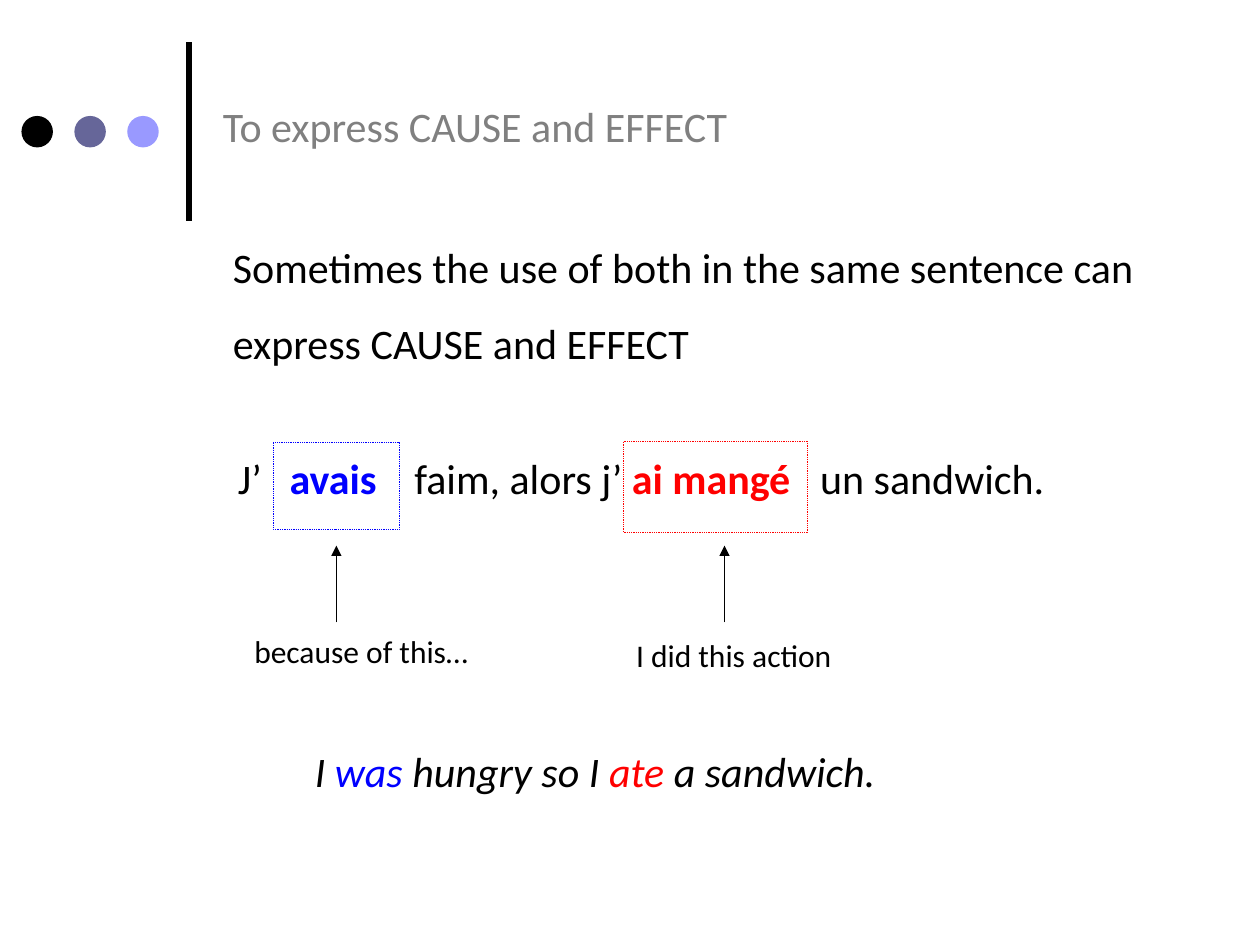
from dataclasses import dataclass

from lxml import etree
from pptx import Presentation
from pptx.dml.color import RGBColor
from pptx.enum.dml import MSO_LINE
from pptx.enum.shapes import MSO_CONNECTOR, MSO_SHAPE
from pptx.oxml.ns import qn
from pptx.util import Inches, Pt

STRAIGHT = MSO_CONNECTOR.STRAIGHT
OVAL = MSO_SHAPE.OVAL
RECTANGLE = MSO_SHAPE.RECTANGLE
DOTTED = MSO_LINE.ROUND_DOT


@dataclass(frozen=True)
class Theme:
    font: str = "Calibri"
    text: RGBColor = RGBColor(0, 0, 0)
    title: RGBColor = RGBColor(0x80, 0x80, 0x80)
    cause: RGBColor = RGBColor(0, 0, 0xFF)
    effect: RGBColor = RGBColor(0xFF, 0, 0)
    dots: tuple = (RGBColor(0, 0, 0), RGBColor(0x66, 0x66, 0x99), RGBColor(0x99, 0x99, 0xFF))
    body_size: int = 24
    caption_size: int = 18


THEME = Theme()


def add_text(slide, box, runs, size=THEME.body_size, italic=False):
    """Place one paragraph of (text, colour, bold) runs and return it."""
    text_box = slide.shapes.add_textbox(*map(Inches, box))
    text_box.text_frame.word_wrap = True
    paragraph = text_box.text_frame.paragraphs[0]
    for text, color, bold in runs:
        run = paragraph.add_run()
        run.text = text
        run.font.name = THEME.font
        run.font.size = Pt(size)
        run.font.bold = bold
        run.font.italic = italic
        run.font.color.rgb = color
    return paragraph


def add_tab_stops(paragraph, positions):
    properties = paragraph._p.get_or_add_pPr()
    tab_list = etree.SubElement(properties, qn("a:tabLst"))
    for position in positions:
        etree.SubElement(tab_list, qn("a:tab"), pos=str(Inches(position)), algn="l")


def add_line(slide, x, bottom, top, width, arrow=False):
    """Draw a vertical line upwards, with an arrowhead at the top if asked."""
    line = slide.shapes.add_connector(
        STRAIGHT, Inches(x), Inches(bottom), Inches(x), Inches(top))
    line.line.color.rgb = THEME.text
    line.line.width = Pt(width)
    if arrow:
        etree.SubElement(line.line._get_or_add_ln(), qn("a:tailEnd"), type="triangle")
    etree.SubElement(line._element.spPr, qn("a:effectLst"))


def add_header(slide, left, top, width, height):
    # Vertical rule
    add_line(slide, left + 1.33, top + height, top, 3)

    # Row of dots
    diameter, pitch = 0.25, 0.42
    for index, color in enumerate(THEME.dots):
        dot = slide.shapes.add_shape(
            OVAL, Inches(left + index * pitch), Inches(top + 0.59),
            Inches(diameter), Inches(diameter))
        dot.shadow.inherit = False
        dot.fill.solid()
        dot.fill.fore_color.rgb = color
        dot.line.fill.background()

    # Title
    add_text(slide, (left + 1.5, top + 0.42, width - 1.5, 0.5),
             [("To express CAUSE and EFFECT", THEME.title, False)])


def add_introduction(slide, box):
    paragraph = add_text(slide, box, [
        ("Sometimes the use of both in the same sentence can express CAUSE and EFFECT",
         THEME.text, False)])
    paragraph.line_spacing = 1.5
    paragraph.space_before = Pt(6)


def add_sentence(slide, box):
    paragraph = add_text(slide, box, [
        ("J’\t", THEME.text, False),
        ("avais\t", THEME.cause, True),
        ("faim, alors j’ ", THEME.text, False),
        ("ai mangé\t", THEME.effect, True),
        ("un sandwich.", THEME.text, False)])
    paragraph.space_before = Pt(6)
    add_tab_stops(paragraph, (0.41, 1.4, 4.62))


def add_callout(slide, frame_box, color, arrow_x, caption_box, caption):
    """Frame a verb, and point at it from a caption below."""
    frame = slide.shapes.add_shape(RECTANGLE, *map(Inches, frame_box))
    frame.shadow.inherit = False
    frame.fill.background()
    frame.line.color.rgb = color
    frame.line.width = Pt(0.5)
    frame.line.dash_style = DOTTED
    add_line(slide, arrow_x, 4.94, 4.33, 0.75, arrow=True)
    add_text(slide, caption_box, [(caption, THEME.text, False)], THEME.caption_size)


def add_translation(slide, box):
    add_text(slide, box, [
        ("I ", THEME.text, False),
        ("was ", THEME.cause, False),
        ("hungry so I ", THEME.text, False),
        ("ate ", THEME.effect, False),
        ("a sandwich.", THEME.text, False)], italic=True)


def main():
    presentation = Presentation()
    presentation.slide_width = Inches(10)
    presentation.slide_height = Inches(7.5)
    slide = presentation.slides.add_slide(presentation.slide_layouts[6])

    add_header(slide, 0.17, 0.33, 9.5, 1.42)
    add_introduction(slide, (1.75, 1.67, 7.92, 1.25))
    add_translation(slide, (2.4, 5.87, 7.33, 0.5))
    add_sentence(slide, (1.79, 3.54, 7.92, 0.5))
    add_callout(slide, (2.17, 3.51, 1, 0.69), THEME.cause, 2.67,
                (1.92, 4.97, 2.17, 0.4), "because of this…")
    add_callout(slide, (4.95, 3.5, 1.46, 0.73), THEME.effect, 5.75,
                (4.95, 5, 1.88, 0.4), "I did this action")

    presentation.save("out.pptx")


if __name__ == "__main__":
    main()
